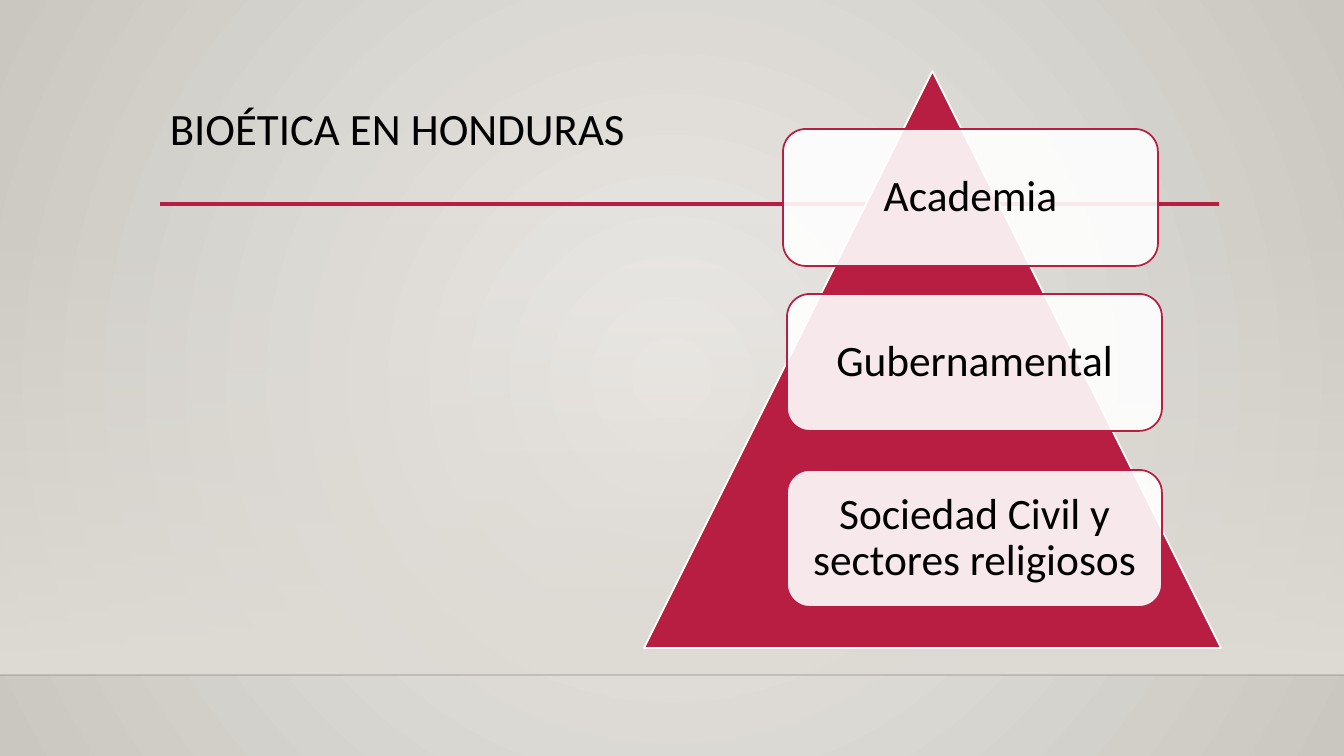
import dataclasses

import lxml.etree
import pptx
import pptx.dml.color
import pptx.enum.shapes
import pptx.enum.text
import pptx.oxml
import pptx.oxml.ns
import pptx.util

SCALE = 914400 / 100.8
SHAPE = pptx.enum.shapes.MSO_SHAPE
ALIGN = pptx.enum.text.PP_ALIGN
ANCHOR = pptx.enum.text.MSO_ANCHOR


@dataclasses.dataclass(frozen=True)
class Theme:
    font: str = "Calibri"
    title: int = 32
    label: int = 31
    ink: str = "000000"
    red: str = "B71E42"
    white: str = "FFFFFF"
    floor: str = "DFDBD5"
    edge: str = "000001"
    inner: str = "ECEAE7"
    outer: str = "CAC7C1"
    thin: float = 1.25


@dataclasses.dataclass(frozen=True)
class Rule:
    left: int
    right: int
    top: int
    color: str
    width: float
    alpha: int = 100


@dataclasses.dataclass(frozen=True)
class Sector:
    text: str
    left: int
    top: int


THEME = Theme()
WIDE, HIGH = 1344, 756
FLOOR = 675
RULES = [
    Rule(0, WIDE, FLOOR, THEME.edge, 1, 20),
    Rule(160, 1219, 204, THEME.red, 2.5),
]
SECTORS = [
    Sector("Academia", 783, 129),
    Sector("Gubernamental", 787, 294),
    Sector("Sociedad Civil y sectores religiosos", 787, 470),
]


def px(size: int) -> int:
    """Turn pixels into EMU."""
    return round(size * SCALE)


def rgb(color: str) -> pptx.dml.color.RGBColor:
    """Turn a hex string into a colour."""
    return pptx.dml.color.RGBColor.from_string(color)


def fade(props, alpha: int) -> None:
    """Set the opacity of the first colour inside the given properties."""
    tone = props.find(".//" + pptx.oxml.ns.qn("a:srgbClr"))
    lxml.etree.SubElement(tone, pptx.oxml.ns.qn("a:alpha"), val=str(alpha * 1000))


def blend(first: str, last: str, alpha: int, course: str):
    """Build a gradient fill between two colours along a course."""
    return pptx.oxml.parse_xml(
        f'<a:gradFill {pptx.oxml.ns.nsdecls("a")} rotWithShape="1"><a:gsLst>'
        f'<a:gs pos="0"><a:srgbClr val="{first}"><a:alpha val="{alpha * 1000}"/></a:srgbClr></a:gs>'
        f'<a:gs pos="100000"><a:srgbClr val="{last}"/></a:gs>'
        f"</a:gsLst>{course}</a:gradFill>"
    )


def paint(slide) -> None:
    """Lay the radial background and the floor glow."""
    slide.background.fill.gradient()
    old = slide.element.find(".//" + pptx.oxml.ns.qn("a:gradFill"))
    ring = '<a:path path="circle"><a:fillToRect l="50000" t="50000" r="50000" b="50000"/></a:path>'
    old.getparent().replace(old, blend(THEME.inner, THEME.outer, 100, ring))
    top = 223
    glow = slide.shapes.add_shape(SHAPE.RECTANGLE, 0, px(top), px(WIDE), px(FLOOR - top))
    glow.shadow.inherit = False
    glow.line.fill.background()
    glow.fill.gradient()
    old = glow.element.spPr.find(pptx.oxml.ns.qn("a:gradFill"))
    down = '<a:lin ang="5400000" scaled="0"/>'
    old.getparent().replace(old, blend(THEME.floor, THEME.floor, 0, down))


def rule(slide, item: Rule) -> None:
    """Draw one level line."""
    kind = pptx.enum.shapes.MSO_CONNECTOR.STRAIGHT
    y = px(item.top)
    line = slide.shapes.add_connector(kind, px(item.left), y, px(item.right), y)
    line.line.color.rgb = rgb(item.color)
    line.line.width = pptx.util.Pt(item.width)
    fade(line.element.spPr, item.alpha)
    lxml.etree.SubElement(line.element.spPr, pptx.oxml.ns.qn("a:effectLst"))


def write(frame, text: str, size: int, align) -> None:
    """Fill a text frame with one paragraph."""
    frame.word_wrap = True
    para = frame.paragraphs[0]
    para.text = text
    para.alignment = align
    para.line_spacing = 0.9
    para.font.name = THEME.font
    para.font.size = pptx.util.Pt(size)
    para.font.color.rgb = rgb(THEME.ink)


def solid(slide, kind, left: int, top: int, wide: int, high: int, fill: str, edge: str):
    """Draw one filled and outlined shape."""
    shape = slide.shapes.add_shape(kind, px(left), px(top), px(wide), px(high))
    shape.shadow.inherit = False
    shape.fill.solid()
    shape.fill.fore_color.rgb = rgb(fill)
    shape.line.color.rgb = rgb(edge)
    shape.line.width = pptx.util.Pt(THEME.thin)
    return shape


def label(slide, item: Sector) -> None:
    """Draw one sector card with its text."""
    card = solid(slide, SHAPE.ROUNDED_RECTANGLE, item.left, item.top, 375, 137, THEME.white, THEME.red)
    fade(card.element.spPr, 90)
    frame = card.text_frame
    frame.margin_left = frame.margin_right = px(13)
    frame.margin_top = frame.margin_bottom = px(13)
    frame.vertical_anchor = ANCHOR.MIDDLE
    write(frame, item.text, THEME.label, ALIGN.CENTER)


def main() -> None:
    """Build the slide and save it."""
    deck = pptx.Presentation()
    deck.slide_width, deck.slide_height = px(WIDE), px(HIGH)
    slide = deck.slides.add_slide(deck.slide_layouts[6])
    paint(slide)
    for item in RULES:
        rule(slide, item)
    title = slide.shapes.add_textbox(px(160), px(102), px(562), px(102))
    write(title.text_frame, "BIOÉTICA EN HONDURAS", THEME.title, ALIGN.LEFT)
    solid(slide, SHAPE.ISOSCELES_TRIANGLE, 644, 71, 577, 577, THEME.red, THEME.white)
    for item in SECTORS:
        label(slide, item)
    deck.save("out.pptx")


if __name__ == "__main__":
    main()
